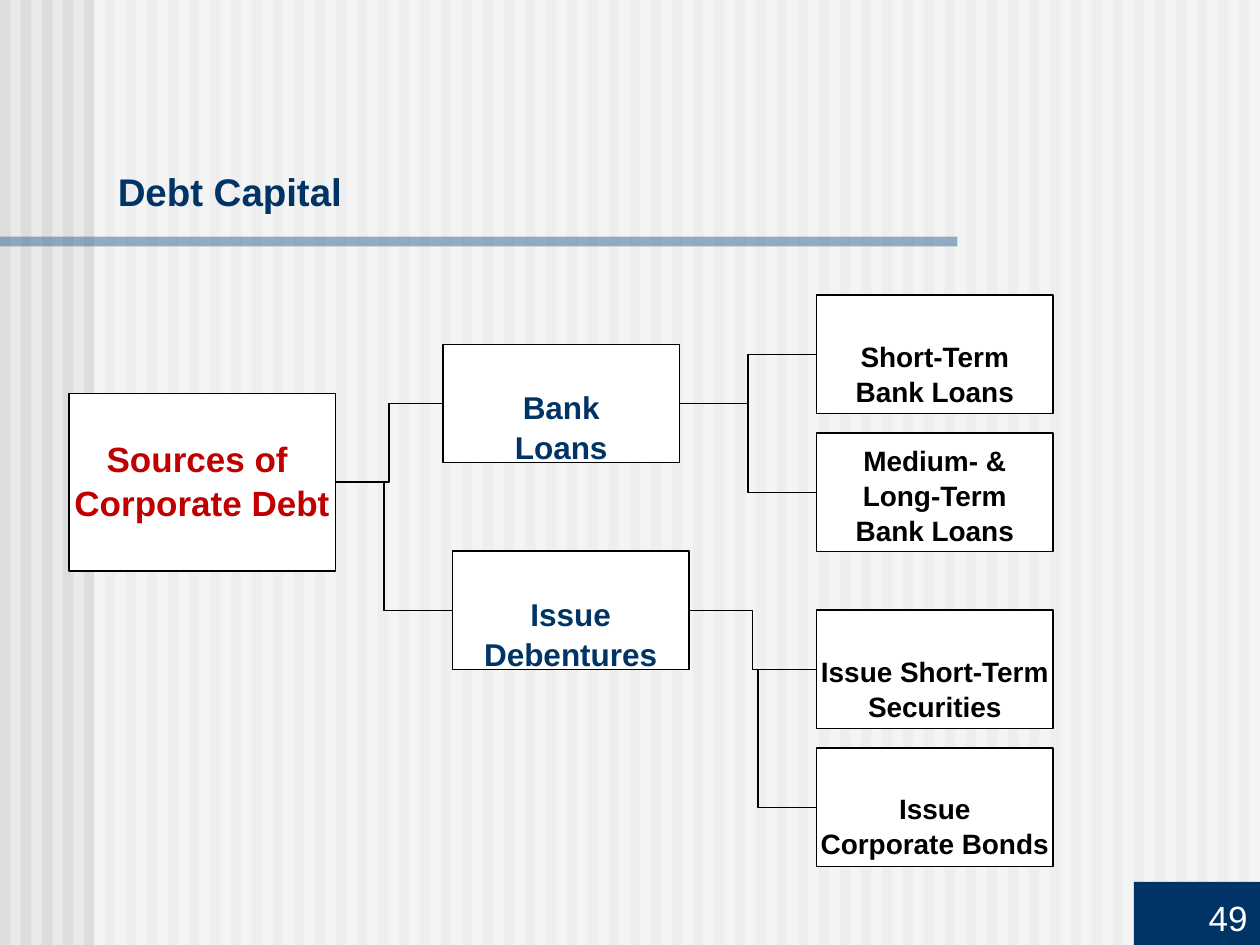
"""Build the slide that maps the sources of corporate debt."""
from dataclasses import dataclass

from lxml.etree import SubElement
from pptx import Presentation
from pptx.dml.color import RGBColor
from pptx.enum.shapes import MSO_CONNECTOR, MSO_SHAPE
from pptx.enum.text import MSO_ANCHOR, PP_ALIGN
from pptx.oxml.ns import qn
from pptx.util import Cm, Pt

COLORS = {
    "background": "EAEAEA",
    "stripe": "DDDDDD",
    "white": "FFFFFF",
    "rule": "336699",
    "navy": "003366",
    "red": "C00000",
    "black": "000000",
}
FONT = "Arial"
PAGE_WIDTH, PAGE_HEIGHT = 25.4, 19.05
STRIPE_COUNT = 60
STRIPE_PITCH = PAGE_WIDTH / STRIPE_COUNT
BOX_WIDTH, BOX_HEIGHT = 4.77, 2.39
LEAF_LEFT = 16.46
LEFT_SIDE, RIGHT_SIDE = 1, 3


@dataclass(frozen=True)
class Node:
    """A box of the tree, with lengths in centimetres."""

    name: str
    text: str
    left: float
    top: float
    color: str = "black"
    size: int = 16
    width: float = BOX_WIDTH
    height: float = BOX_HEIGHT
    inset: float = 0.86


NODES = [
    Node("sources", "Sources of \nCorporate Debt", 1.39, 7.93, "red", 20, 5.37, 3.58),
    Node("debentures", "Issue\nDebentures", 9.12, 11.11, "navy", 18),
    Node("short securities", "Issue Short-Term\vSecurities", LEAF_LEFT, 12.3),
    Node("long loans", "Medium- &\vLong-Term\vBank Loans", LEAF_LEFT, 8.73, inset=0.18),
    Node("short loans", "Short-Term\vBank Loans", LEAF_LEFT, 5.95),
    Node("loans", "Bank\nLoans", 8.93, 6.94, "navy", 18),
    Node("bonds", "Issue\vCorporate Bonds", LEAF_LEFT, 15.08),
]
LINKS = [
    ("sources", "loans"),
    ("loans", "short loans"),
    ("loans", "long loans"),
    ("debentures", "short securities"),
]
CORNERS = [("debentures", 7.74, 9.72), ("bonds", 15.28, 13.49)]


def rgb(name: str) -> RGBColor:
    """Look up a named colour."""
    return RGBColor.from_string(COLORS[name])


def add_block(page, left: float, top: float, width: float, height: float,
              color: str, alpha: int = 100):
    """Add a plain filled rectangle."""
    block = page.shapes.add_shape(
        MSO_SHAPE.RECTANGLE, Cm(left), Cm(top), Cm(width), Cm(height))
    block.shadow.inherit = False
    block.line.fill.background()
    block.fill.solid()
    block.fill.fore_color.rgb = rgb(color)
    if alpha < 100:
        paint = block.element.spPr.find(qn("a:solidFill"))[0]
        SubElement(paint, qn("a:alpha"), val=str(alpha * 1000))
    return block


def format_text(shape, color: str, size: int, align, bold: bool = True) -> None:
    """Format every run of a shape alike."""
    for paragraph in shape.text_frame.paragraphs:
        paragraph.alignment = align
        for span in paragraph.runs:
            span.font.name = FONT
            span.font.size = Pt(size)
            span.font.bold = bold
            span.font.color.rgb = rgb(color)


def add_node(page, node: Node):
    """Add one outlined box with its label."""
    box = add_block(page, node.left, node.top, node.width, node.height, "white")
    box.line.color.rgb = rgb("black")
    box.line.width = Pt(0.75)
    frame = box.text_frame
    frame.text = node.text
    frame.word_wrap = False
    frame.vertical_anchor = MSO_ANCHOR.TOP
    frame.margin_top = Cm(node.inset)
    frame.margin_left = frame.margin_right = frame.margin_bottom = 0
    for paragraph in frame.paragraphs:
        paragraph.line_spacing = 1.04
    format_text(box, node.color, node.size, PP_ALIGN.CENTER)
    return box


def add_elbow(page, start, side: int, end_x: int = 0, end_y: int = 0):
    """Add a bent line that leaves a box at the given side."""
    elbow = page.shapes.add_connector(MSO_CONNECTOR.ELBOW, 0, 0, end_x, end_y)
    elbow.begin_connect(start, side)
    elbow.line.color.rgb = rgb("black")
    elbow.line.width = Pt(0.75)
    SubElement(elbow.element.spPr, qn("a:effectLst"))
    return elbow


def add_corner(page, start, end_x: float, end_y: float) -> None:
    """Add a single bend that runs left from a box and then up."""
    corner = add_elbow(page, start, LEFT_SIDE, Cm(end_x), Cm(end_y))
    properties = corner.element.spPr
    properties.find(qn("a:prstGeom")).set("prst", "bentConnector2")
    transform = properties.find(qn("a:xfrm"))
    for flip in ("flipH", "flipV"):
        transform.attrib.pop(flip, None)
    transform.set("rot", "10800000")


def add_backdrop(page) -> None:
    """Draw the striped ground, the veil and the title rule."""
    page.background.fill.solid()
    page.background.fill.fore_color.rgb = rgb("background")
    for index in range(STRIPE_COUNT):
        add_block(page, index * STRIPE_PITCH, 0, STRIPE_PITCH / 2, PAGE_HEIGHT, "stripe")
    add_block(page, 1.9, 0, PAGE_WIDTH - 1.9, PAGE_HEIGHT, "white", 50)
    add_block(page, 0, 4.77, 19.3, 0.2, "rule", 50)


def add_title(page) -> None:
    """Fill the title placeholder and bring it above the backdrop."""
    title = page.shapes.title
    title.left, title.top, title.width, title.height = Cm(2.12), Cm(3.25), Cm(22.68), Cm(1.2)
    title.text_frame.text = "Debt Capital"
    title.text_frame.word_wrap = True
    title.text_frame.vertical_anchor = MSO_ANCHOR.BOTTOM
    format_text(title, "navy", 22, PP_ALIGN.LEFT)
    title.element.getparent().append(title.element)


def add_page_number(page) -> None:
    """Add the page number in the lower right corner."""
    number = add_block(page, 22.86, 17.78, 2.54, 1.27, "navy")
    number.text_frame.text = "49"
    number.text_frame.vertical_anchor = MSO_ANCHOR.BOTTOM
    format_text(number, "white", 20, PP_ALIGN.RIGHT, bold=False)


def main() -> None:
    """Build and save the deck."""
    deck = Presentation()
    deck.slide_width, deck.slide_height = Cm(PAGE_WIDTH), Cm(PAGE_HEIGHT)
    page = deck.slides.add_slide(deck.slide_layouts[5])
    add_backdrop(page)
    add_page_number(page)
    add_title(page)
    boxes = {node.name: add_node(page, node) for node in NODES}
    for start, end in LINKS:
        add_elbow(page, boxes[start], RIGHT_SIDE).end_connect(boxes[end], LEFT_SIDE)
    for start, end_x, end_y in CORNERS:
        add_corner(page, boxes[start], end_x, end_y)
    deck.save("out.pptx")


if __name__ == "__main__":
    main()
